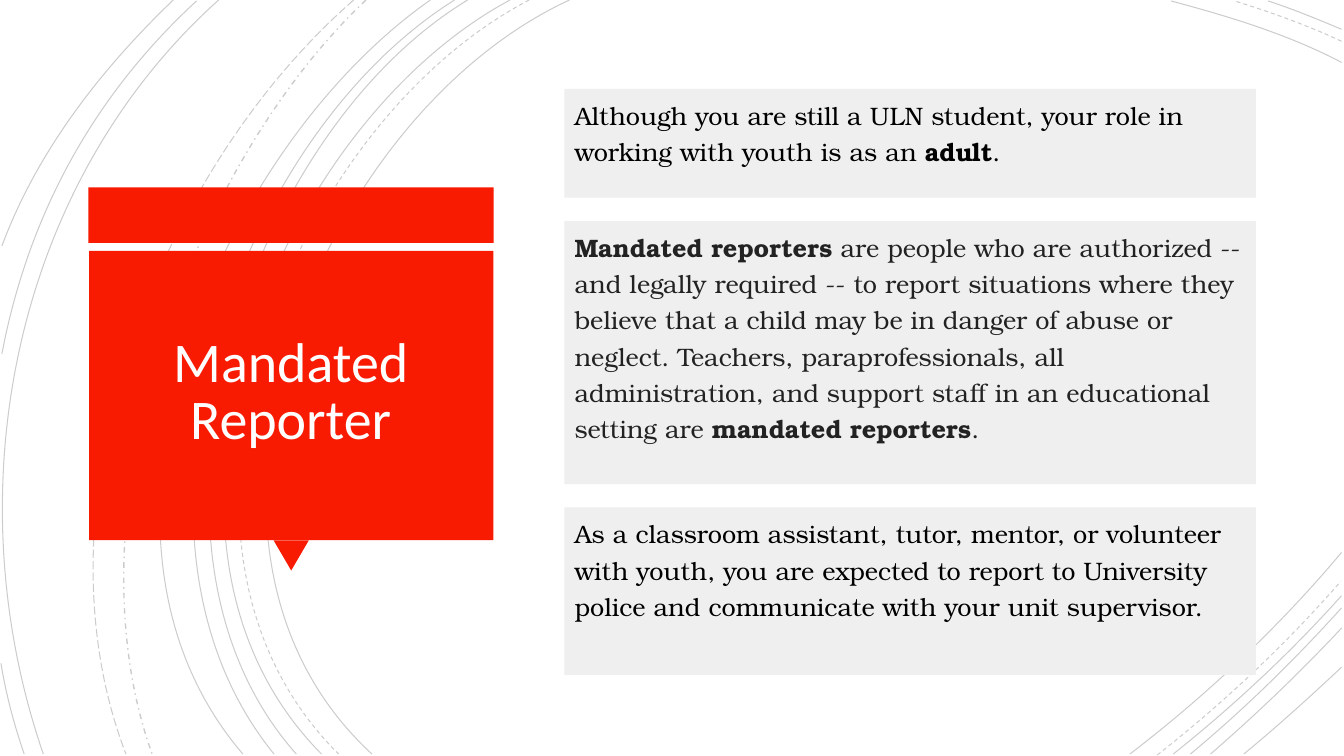
from lxml import etree
from pptx import Presentation
from pptx import util as u
from pptx.dml.color import RGBColor
from pptx.enum import dml, shapes, text
from pptx.oxml import ns

SOLID, DASH = dml.MSO_LINE.SOLID, dml.MSO_LINE.DASH
DASH_DOT, LONG_DASH = dml.MSO_LINE.DASH_DOT, dml.MSO_LINE.LONG_DASH


def colour(value):
    return RGBColor.from_string(value)


class MandateSlide:
    RED, GREY, BLACK, WHITE = "F81B02", "EFEFEF", "000000", "FFFEFF"
    TITLE_FONT, BODY_FONT = "Calibri", "TeX Gyre Bonum"

    def __init__(self, slide):
        self.slide = slide

    def arc(self, points, dash=SOLID, width=0.75):
        """Draw one Bezier arc: start, two control points, end."""
        start, *rest = [(u.Pt(x), u.Pt(y)) for x, y in points]
        builder = self.slide.shapes.build_freeform(*start)
        builder.add_line_segments(rest, close=False)
        curve = builder.convert_to_shape()
        curve.shadow.inherit = False
        curve.fill.background()
        curve.line.color.rgb = colour(self.BLACK)
        curve.line.width = u.Pt(width)
        curve.line.dash_style = dash
        # Turn the three segments into a single cubic curve
        path = curve.element.xpath(".//a:path")[0]
        cubic = etree.SubElement(path, ns.qn("a:cubicBezTo"))
        for segment in path.findall(ns.qn("a:lnTo")):
            cubic.append(segment[0])
            path.remove(segment)
        # Let the line show at 20 % opacity
        ink = curve.element.xpath(".//a:ln//a:srgbClr")[0]
        etree.SubElement(ink, ns.qn("a:alpha"), val="20000")

    def block(self, kind, left, top, width, height, rotation=0):
        shape = self.slide.shapes.add_shape(
            kind, u.Pt(left), u.Pt(top), u.Pt(width), u.Pt(height))
        shape.shadow.inherit = False
        shape.fill.solid()
        shape.fill.fore_color.rgb = colour(self.RED)
        shape.line.fill.background()
        shape.rotation = rotation

    def place(self, holder, left, top, width, height, inset, anchor):
        """Move a placeholder to the front and set up its text frame."""
        holder.left, holder.top = u.Pt(left), u.Pt(top)
        holder.width, holder.height = u.Pt(width), u.Pt(height)
        holder.element.getparent().append(holder.element)
        frame = holder.text_frame
        frame.word_wrap = True
        frame.auto_size = text.MSO_AUTO_SIZE.NONE
        frame.vertical_anchor = anchor
        frame.margin_left = frame.margin_right = u.Pt(7.2)
        frame.margin_top = frame.margin_bottom = u.Pt(inset)
        return frame.paragraphs[0]

    def run(self, paragraph, words, font, size, ink, bold=False):
        run = paragraph.add_run()
        run.text = words
        run.font.name, run.font.size, run.font.bold = font, u.Pt(size), bold
        run.font.color.rgb = colour(ink)

    def title(self, words, left, top, width, height):
        heading = self.place(self.slide.shapes.title, left, top, width, height,
                             7.2, text.MSO_ANCHOR.MIDDLE)
        heading.alignment = text.PP_ALIGN.CENTER
        heading.line_spacing = 0.85
        self.run(heading, words, self.TITLE_FONT, 40, self.WHITE)

    def panel(self, holder, left, top, width, height, ink, runs):
        holder.fill.solid()
        holder.fill.fore_color.rgb = colour(self.GREY)
        statement = self.place(holder, left, top, width, height,
                               3.6, text.MSO_ANCHOR.TOP)
        statement.alignment = text.PP_ALIGN.LEFT
        statement.line_spacing = 1.2
        statement.space_before, statement.space_after = u.Pt(10), u.Pt(0)
        properties = statement._p.get_or_add_pPr()
        properties.set("marL", "0")
        properties.set("indent", "0")
        etree.SubElement(properties, ns.qn("a:buNone"))
        for words, bold in runs:
            self.run(statement, words, self.BODY_FONT, 18, ink, bold)


SOLID_ARCS = [
    # Large arcs on the left
    [(406.8, 0), (226.8, 82.8), (103, 388.8), (265.7, 538.6)],
    [(364.3, 0), (194.4, 91.4), (79.2, 386.6), (229.7, 538.6)],
    [(334.1, 0), (175.7, 95.8), (79.2, 389.5), (211.7, 538.6)],
    [(324.7, 0), (166.3, 99.4), (69.8, 383.8), (195.8, 538.6)],
    [(307.4, 0), (156.2, 105.8), (38.2, 380.9), (173.5, 538.6)],
    [(156.2, 0), (7.9, 133.2), (-33.1, 352.8), (31, 538.6)],
    [(140.4, 0.7), (66.2, 69.1), (20.2, 154.1), (1.4, 252.7)],
    [(0.7, 473.8), (4.3, 496.1), (10.1, 517.7), (17.3, 538.6)],
    [(123.8, 0), (72, 49.7), (26.6, 108), (1.4, 175.7)],
    # Top right corner
    [(958.3, 44.6), (920.2, 24.5), (877, 11.5), (836.6, 0.7)],
    [(958.3, 20.9), (941, 13.7), (923.8, 6.5), (905.8, 0.7)],
    # Bottom right corner
    [(807.1, 538.6), (861.8, 496.8), (913.7, 447.8), (958.3, 394.6)],
    [(838.1, 538.6), (880.6, 504.7), (921.6, 466.6), (958.3, 425.5)],
    [(850.3, 538.6), (888.5, 506.9), (924.5, 471.6), (958.3, 434.2)],
    [(864.7, 538.6), (897.1, 510.5), (928.8, 480.2), (958.3, 448.6)],
    [(888.5, 538.6), (912.2, 519.1), (935.3, 498.2), (958.3, 476.6)],
]
BROKEN_ARCS = [
    ([(378, 0), (205.2, 90), (88.6, 386.6), (241.9, 538.6)], DASH, 0.75),
    ([(958.3, 29.5), (933.8, 18), (907.2, 8.6), (882, 0.7)], DASH, 0.75),
    ([(826.6, 539.3), (873.4, 502.6), (918, 460.8), (957.6, 415.4)], DASH, 0.75),
    ([(261.4, 0), (134.6, 119.5), (46.8, 366.5), (108.7, 538.6)], DASH_DOT, 1),
    ([(252.7, 0), (113, 121.7), (20.9, 359.3), (90, 538.6)], LONG_DASH, 0.75),
]
STATEMENTS = [
    (77.8, "000000", [
        ("Although you are still a ULN student, your role in working with "
         "youth is as an ", False), ("adult", True), (".", False)]),
    (187.9, "222222", [
        ("Mandated reporters", True),
        (" are people who are authorized -- and legally required -- to report "
         "situations where they believe that a child may be in danger of abuse "
         "or neglect. Teachers, paraprofessionals, all administration, and "
         "support staff in an educational setting are ", False),
        ("mandated reporters", True), (".", False)]),
    (119.5, "000000", [
        ("As a classroom assistant, tutor, mentor, or volunteer with youth, "
         "you are expected to report to University police and communicate "
         "with your unit supervisor.", False)]),
]


def main():
    deck = Presentation()
    deck.slide_width, deck.slide_height = u.Pt(960), u.Pt(540)
    page = MandateSlide(deck.slides.add_slide(deck.slide_layouts[4]))
    _, *bodies, spare = page.slide.placeholders
    spare.element.getparent().remove(spare.element)

    # Background arcs
    for points in SOLID_ARCS:
        page.arc(points)
    for points, dash, width in BROKEN_ARCS:
        page.arc(points, dash, width)

    # Red title callout
    page.block(shapes.MSO_SHAPE.RECTANGLE, 63.2, 133.9, 289.4, 39.6)
    page.block(shapes.MSO_SHAPE.ISOSCELES_TRIANGLE, 195.4, 385.9, 25.2, 21.6, 180)
    page.block(shapes.MSO_SHAPE.RECTANGLE, 63.7, 179.3, 288.7, 206.6)
    page.title("Mandated Reporter", 69.8, 184.3, 275.8, 194.4)

    # Statement panels, stacked with equal gaps
    top, gap = 63.4, 16.7
    for holder, (height, ink, runs) in zip(bodies, STATEMENTS):
        page.panel(holder, 403.2, top, 493.9, height, ink, runs)
        top += height + gap

    deck.save("out.pptx")


if __name__ == "__main__":
    main()
